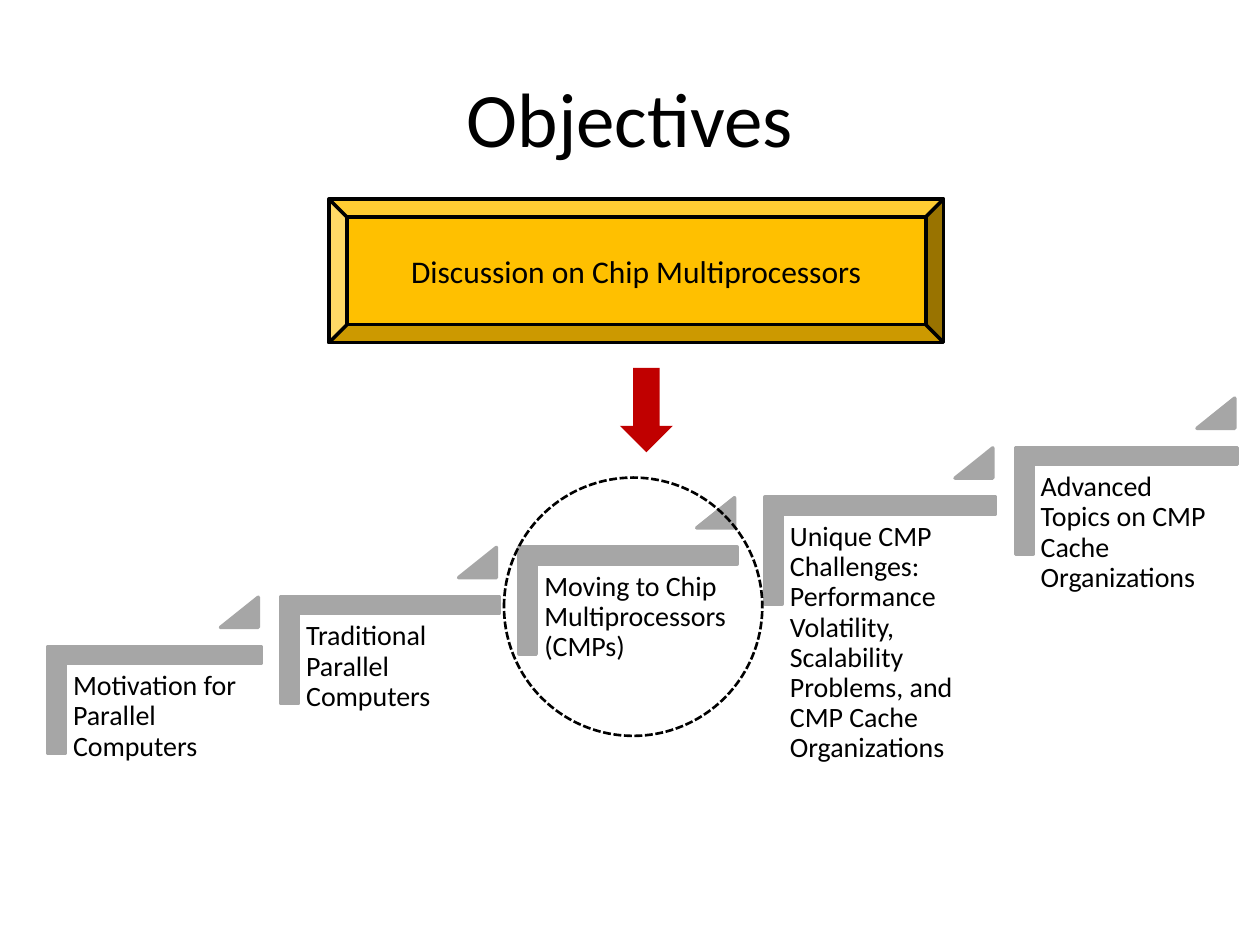
from dataclasses import dataclass

from pptx import Presentation
from pptx.dml.color import RGBColor
from pptx.enum.dml import MSO_LINE
from pptx.enum.shapes import MSO_SHAPE
from pptx.enum.text import MSO_ANCHOR, PP_ALIGN
from pptx.shapes.autoshape import Shape
from pptx.util import Inches, Length, Pt


@dataclass(frozen=True)
class Theme:
    font: str = "Calibri"
    ink: str = "000000"
    gold: str = "FFC000"
    red: str = "C00000"
    gray: str = "A6A6A6"
    title_size: float = 44
    topic_size: float = 18
    step_size: float = 16


@dataclass(frozen=True)
class Box:
    """Place and size in grid columns and rows."""
    left: float
    top: float
    width: float
    height: float

    def lengths(self) -> tuple[Length, ...]:
        return tuple(grid(n) for n in (self.left, self.top, self.width, self.height))


@dataclass(frozen=True)
class Step:
    text: str
    left: float
    width: float
    text_width: float
    text_height: float


THEME = Theme()
COLUMNS, ROWS = 100, 75  # square grid cells over the whole slide
FIRST_TOP, RISE = 51.3, 3.95  # staircase start and rise per step
BRACKET_HEIGHT, BRACKET_BAR = 8.5, 0.16
TEXT_OFFSET = 1.4
MARKER_WIDTH, MARKER_HEIGHT, MARKER_LIFT, MARKER_INSET = 3, 2.4, 3.9, 0.2

STEPS = [
    Step("Motivation for Parallel Computers", 3.8, 16.9, 17, 16.5),
    Step("Traditional Parallel Computers", 22.3, 17.3, 16.8, 17),
    Step("Moving to Chip Multiprocessors (CMPs)", 41.2, 17.3, 16.8, 17),
    Step("Unique CMP Challenges: Performance Volatility, Scalability Problems, "
         "and CMP Cache Organizations", 60.7, 18.3, 16.6, 20.9),
    Step("Advanced Topics on CMP Cache Organizations", 80.6, 17.6, 15.9, 11.2),
]


def grid(cells: float) -> Length:
    return Inches(10 * cells / COLUMNS)


def add_figure(slide, kind: MSO_SHAPE, box: Box, fill: str | None = None,
               line: str | None = None, line_width: float = 2) -> Shape:
    figure = slide.shapes.add_shape(kind, *box.lengths())
    figure.shadow.inherit = False
    if fill:
        figure.fill.solid()
        figure.fill.fore_color.rgb = RGBColor.from_string(fill)
    else:
        figure.fill.background()
    if line:
        figure.line.color.rgb = RGBColor.from_string(line)
        figure.line.width = Pt(line_width)
    else:
        figure.line.fill.background()
    return figure


def write(holder: Shape, text: str, size: float, align: PP_ALIGN, anchor: MSO_ANCHOR) -> None:
    frame = holder.text_frame
    frame.word_wrap = True
    frame.vertical_anchor = anchor
    paragraph = frame.paragraphs[0]
    paragraph.text = text
    paragraph.alignment = align
    paragraph.font.name = THEME.font
    paragraph.font.size = Pt(size)
    paragraph.font.color.rgb = RGBColor.from_string(THEME.ink)


def add_step(slide, step: Step, top: float) -> None:
    # Bracket: an L shape drawn upright, then turned about its centre
    shift = (step.width - BRACKET_HEIGHT) / 2
    bracket = add_figure(slide, MSO_SHAPE.CORNER,
                         Box(step.left + shift, top - shift, BRACKET_HEIGHT, step.width),
                         THEME.gray, THEME.gray)
    bracket.rotation = 90
    bracket.adjustments[0] = bracket.adjustments[1] = BRACKET_BAR

    # Step wording
    label = slide.shapes.add_textbox(*Box(step.left + TEXT_OFFSET, top + TEXT_OFFSET,
                                          step.text_width, step.text_height).lengths())
    write(label, step.text, THEME.step_size, PP_ALIGN.LEFT, MSO_ANCHOR.TOP)
    frame = label.text_frame
    frame.margin_left = frame.margin_right = Inches(0.06)
    frame.margin_top = frame.margin_bottom = Inches(0.06)
    frame.paragraphs[0].line_spacing = 0.9

    # Rising marker above the bracket's right end
    marker_left = step.left + step.width - MARKER_INSET - MARKER_WIDTH
    marker = add_figure(slide, MSO_SHAPE.ISOSCELES_TRIANGLE,
                        Box(marker_left, top - MARKER_LIFT, MARKER_WIDTH, MARKER_HEIGHT),
                        THEME.gray, THEME.gray)
    marker.adjustments[0] = 1


def main() -> None:
    deck = Presentation()
    deck.slide_width, deck.slide_height = grid(COLUMNS), grid(ROWS)
    slide = deck.slides.add_slide(deck.slide_layouts[6])

    # Title and topic
    title = slide.shapes.add_textbox(*Box(5, 3, 90, 12.5).lengths())
    write(title, "Objectives", THEME.title_size, PP_ALIGN.CENTER, MSO_ANCHOR.MIDDLE)
    topic = add_figure(slide, MSO_SHAPE.BEVEL, Box(26.1, 15.8, 48.8, 11.4),
                       THEME.gold, THEME.ink)
    write(topic, "Discussion on Chip Multiprocessors", THEME.topic_size,
          PP_ALIGN.CENTER, MSO_ANCHOR.MIDDLE)
    add_figure(slide, MSO_SHAPE.DOWN_ARROW, Box(49.2, 29.2, 4.2, 6.7), THEME.red)

    # Staircase of objectives
    for index, step in enumerate(STEPS):
        add_step(slide, step, FIRST_TOP - index * RISE)

    # Ring around the current objective
    ring = add_figure(slide, MSO_SHAPE.OVAL, Box(40, 37.9, 20.5, 20.5),
                      line=THEME.ink, line_width=1.5)
    ring.line.dash_style = MSO_LINE.SQUARE_DOT

    deck.save("out.pptx")


if __name__ == "__main__":
    main()
